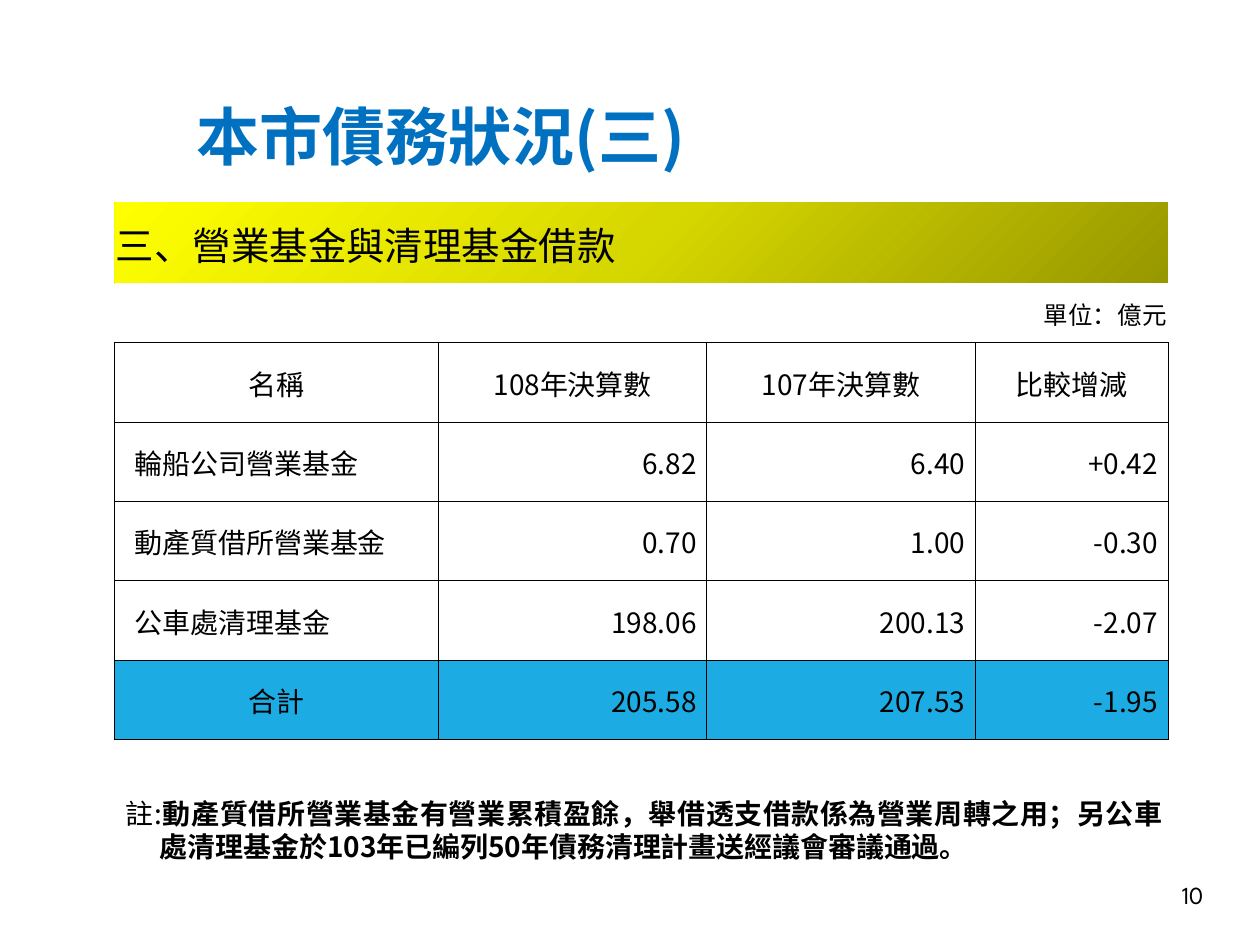
from lxml import etree
from pptx import Presentation
from pptx.dml.color import RGBColor
from pptx.enum.text import MSO_ANCHOR, PP_ALIGN
from pptx.oxml.ns import qn
from pptx.util import Inches, Pt

LEFT, CENTER, RIGHT, JUSTIFY = PP_ALIGN.LEFT, PP_ALIGN.CENTER, PP_ALIGN.RIGHT, PP_ALIGN.JUSTIFY
TOP, MIDDLE = MSO_ANCHOR.TOP, MSO_ANCHOR.MIDDLE
BLACK = RGBColor(0x00, 0x00, 0x00)
WHITE = RGBColor(0xFF, 0xFF, 0xFF)
TITLE_BLUE = RGBColor(0x00, 0x70, 0xC0)
TOTAL_BLUE = RGBColor(0x1C, 0xAC, 0xE3)
BANNER_STOPS = [(0, RGBColor(0x97, 0x97, 0x00)), (50, RGBColor(0xD7, 0xD7, 0x00)),
                (100, RGBColor(0xFF, 0xFF, 0x00))]
CJK_FONT, NUMBER_FONT = "Noto Sans CJK SC", "League Spartan"

COLUMNS = [2.57, 2.13, 2.13, 1.53]
ROWS = [0.64, 0.47] + [0.63] * 5
TABLE_LEFT, TABLE_TOP = 0.91, 1.61
BANNER, UNIT, HEADER, TOTAL = 0, 1, 2, 6
CELLS = [
    ["三、營業基金與清理基金借款", "", "", ""],
    ["", "單位：億元", "", ""],
    ["名稱", "108年決算數", "107年決算數", "比較增減"],
    ["輪船公司營業基金", "6.82", "6.40", "+0.42"],
    ["動產質借所營業基金", "0.70", "1.00", "-0.30"],
    ["公車處清理基金", "198.06", "200.13", "-2.07"],
    ["合計", "205.58", "207.53", "-1.95"],
]


def write(frame, spans, size, align=LEFT, color=BLACK, font=CJK_FONT):
    """Fill the first paragraph with (text, bold) spans."""
    para = frame.paragraphs[0]
    para.alignment = align
    for text, bold in spans:
        span = para.add_run()
        span.text = text
        for name, value in {"size": Pt(size), "bold": bold, "name": font}.items():
            setattr(span.font, name, value)
        span.font.color.rgb = color
        etree.SubElement(span.font._element, qn("a:ea"), typeface=font)
    return para


def add_box(page, left, top, width, height, anchor=TOP):
    box = page.shapes.add_textbox(Inches(left), Inches(top), Inches(width), Inches(height))
    box.text_frame.word_wrap = True
    box.text_frame.vertical_anchor = anchor
    return box.text_frame


deck = Presentation()
deck.slide_width, deck.slide_height = Inches(10), Inches(7.5)
page = deck.slides.add_slide(deck.slide_layouts[6])
page.background.fill.solid()
page.background.fill.fore_color.rgb = WHITE

# Title
title = add_box(page, 1.46, 0.68, 6.6, 0.79, MIDDLE)
write(title, [("本市債務狀況(三)", True)], 36, color=TITLE_BLUE)

# Debt table: grid
table = page.shapes.add_table(
    len(ROWS), len(COLUMNS), Inches(TABLE_LEFT), Inches(TABLE_TOP),
    Inches(sum(COLUMNS)), Inches(sum(ROWS))).table
table.first_row = table.horz_banding = False
for column, width in zip(table.columns, COLUMNS):
    column.width = Inches(width)
for row, height in zip(table.rows, ROWS):
    row.height = Inches(height)
table.cell(BANNER, 0).merge(table.cell(BANNER, 3))
table.cell(UNIT, 1).merge(table.cell(UNIT, 3))

# Debt table: text, borders and fills
for r, texts in enumerate(CELLS):
    for c, text in enumerate(texts):
        cell = table.cell(r, c)
        is_number = r > HEADER and c > 0
        is_fund = HEADER < r < TOTAL and c == 0
        if r == BANNER:
            align = LEFT
        elif r == UNIT or is_number:
            align = RIGHT
        else:
            align = LEFT if is_fund else CENTER
        layout = {
            "vertical_anchor": MIDDLE,
            "margin_left": Inches(0.16 if is_fund else 0.01),
            "margin_right": Inches(0.08 if is_number else 0.01),
            "margin_top": Inches(0.01),
            "margin_bottom": 0,
        }
        for name, value in layout.items():
            setattr(cell, name, value)
        if text:
            write(cell.text_frame, [(text, False)], {BANNER: 22, UNIT: 14}.get(r, 16), align)

        properties = cell._tc.get_or_add_tcPr()
        for side in "LRTB":
            line = etree.SubElement(properties, qn(f"a:ln{side}"), w=str(Pt(0.5)))
            if r >= HEADER or (r == UNIT and side == "B"):
                ink = etree.SubElement(line, qn("a:solidFill"))
                etree.SubElement(ink, qn("a:srgbClr"), val=str(BLACK))
            else:
                etree.SubElement(line, qn("a:noFill"))

        if r == BANNER:
            gradient = etree.SubElement(properties, qn("a:gradFill"), rotWithShape="1")
            stops = etree.SubElement(gradient, qn("a:gsLst"))
            for percent, color in BANNER_STOPS:
                stop = etree.SubElement(stops, qn("a:gs"), pos=str(percent * 1000))
                etree.SubElement(stop, qn("a:srgbClr"), val=str(color))
            etree.SubElement(gradient, qn("a:lin"), ang=str(225 * 60000), scaled="0")
        else:
            cell.fill.solid()
            cell.fill.fore_color.rgb = TOTAL_BLUE if r == TOTAL else WHITE

# Note with hanging indent
note = write(add_box(page, 0.28, 6.27, 9.06, 0.63), [
    ("註:", False),
    ("動產質借所營業基金有營業累積盈餘，舉借透支借款係為營業周轉之用；"
     "另公車處清理基金於103年已編列50年債務清理計畫送經議會審議通過。", True),
], 16, JUSTIFY)
note.line_spacing = Pt(19.2)
indents = note._p.get_or_add_pPr()
indents.set("marL", str(Inches(0.89)))
indents.set("indent", str(Inches(-0.27)))

# Page number
number = add_box(page, 9.01, 6.9, 0.64, 0.4, MIDDLE)
write(number, [("10", False)], 14, RIGHT, font=NUMBER_FONT)

deck.save("out.pptx")
